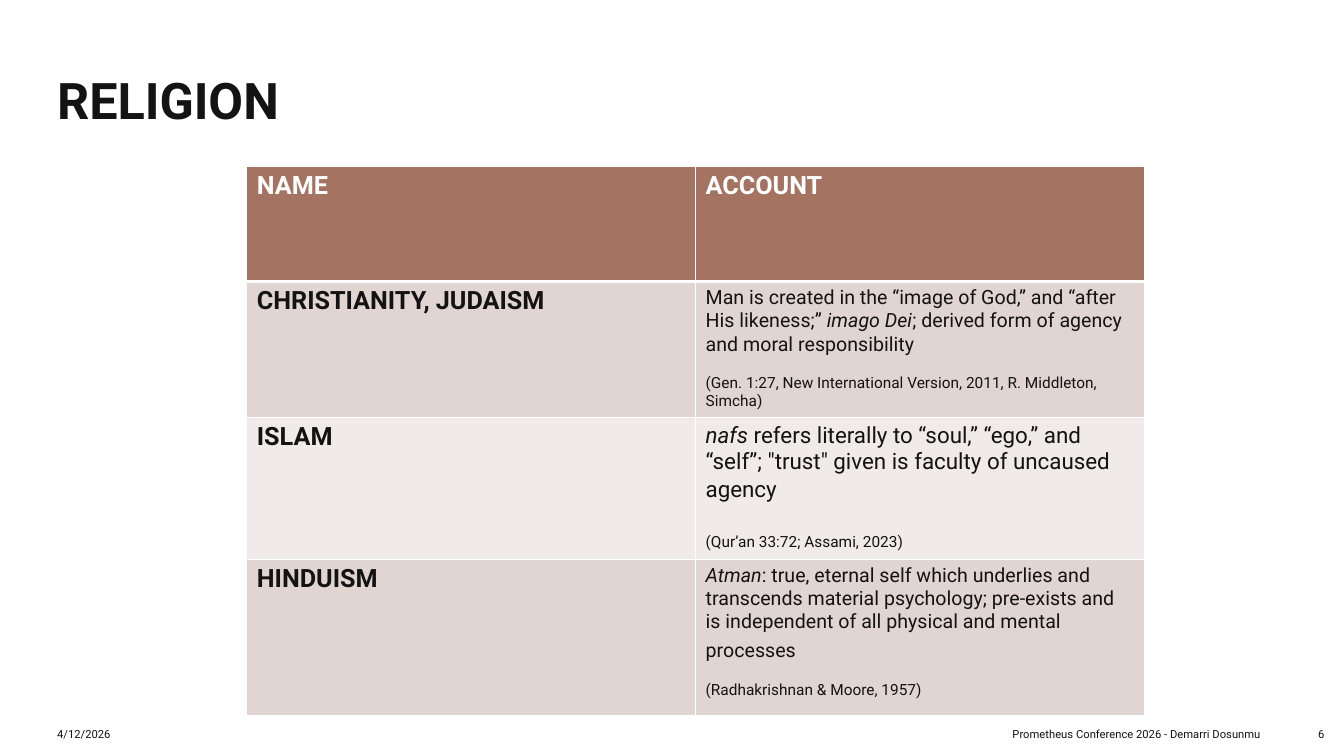
from lxml.etree import SubElement
from pptx import Presentation
from pptx.dml.color import RGBColor as Rgb
from pptx.enum.text import MSO_ANCHOR as Anchor, PP_ALIGN as Align
from pptx.oxml.ns import qn
from pptx.util import Cm, Pt

COLORS = {
    "ink": "131313",
    "white": "FFFFFF",
    "header": "A57361",
    "band_dark": "E1D5D2",
    "band_light": "F0EBEA",
}

# Each row: name, account as (text, size, italic) runs, citation, gap above it
RELIGIONS = [
    ("CHRISTIANITY, JUDAISM",
     [("Man is created in the “image of God,” and “after His likeness;” ", 14, False),
      ("imago Dei", 14, True),
      ("; derived form of agency and moral responsibility", 14, False)],
     "(Gen. 1:27, New International Version, 2011, R. Middleton, Simcha)", 13),
    ("ISLAM",
     [("nafs", 16, True),
      (" refers literally to “soul,” “ego,” and “self”; \"trust\" given is "
       "faculty of uncaused agency", 16, False),
      (" ", 18, False)],
     "(Qur’an 33:72; Assami, 2023)", 21),
    ("HINDUISM",
     [("Atman", 14, True),
      (": true, eternal self which underlies and transcends material psychology; "
       "pre-exists and is independent of all physical and mental processes", 14, False),
      (" ", 18, False)],
     "(Radhakrishnan & Moore, 1957)", 13),
]
ROW_HEIGHTS = [2.9, 3.37, 3.51, 3.94]
COLUMN_WIDTH = 11.31


def write(paragraph, text, size=18, color="ink", bold=False, italic=False):
    run = paragraph.add_run()
    run.text = text
    font = run.font
    font.name = "Roboto"
    font.size = Pt(size)
    font.bold = bold
    font.italic = italic
    font.color.rgb = Rgb.from_string(COLORS[color])


class SlideBuilder:
    def __init__(self, slide):
        self.slide = slide

    def text(self, left, top, width, height, words, align=Align.LEFT,
             anchor=Anchor.MIDDLE, spacing=1.0, **style):
        box = self.slide.shapes.add_textbox(Cm(left), Cm(top), Cm(width), Cm(height))
        frame = box.text_frame
        frame.word_wrap = True
        frame.vertical_anchor = anchor
        paragraph = frame.paragraphs[0]
        paragraph.alignment = align
        paragraph.line_spacing = spacing
        write(paragraph, words, **style)

    def table(self, left, top, column_widths, row_heights):
        table = self.slide.shapes.add_table(
            len(row_heights), len(column_widths), Cm(left), Cm(top),
            Cm(sum(column_widths)), Cm(sum(row_heights))).table
        for column, width in zip(table.columns, column_widths):
            column.width = Cm(width)
        for row, height in zip(table.rows, row_heights):
            row.height = Cm(height)
        return table

    def cell(self, cell, fill, top=1, bottom=1):
        properties = cell._tc.get_or_add_tcPr()
        for side, points in (("L", 1), ("R", 1), ("T", top), ("B", bottom)):
            line = SubElement(properties, qn(f"a:ln{side}"), w=str(Pt(points)))
            solid = SubElement(line, qn("a:solidFill"))
            SubElement(solid, qn("a:srgbClr"), val=COLORS["white"])
        cell.fill.solid()
        cell.fill.fore_color.rgb = Rgb.from_string(COLORS[fill])
        return cell.text_frame


def main():
    deck = Presentation()
    deck.slide_width, deck.slide_height = Cm(33.87), Cm(19.05)
    page = SlideBuilder(deck.slides.add_slide(deck.slide_layouts[6]))

    # Title
    page.text(1.19, 1.78, 11.2, 10.06, "RELIGION", anchor=Anchor.TOP,
              spacing=0.9, size=36, bold=True)

    # Footer
    for left, width, words, align in (
            (1.19, 7.9, "4/12/2026", Align.LEFT),
            (24.71, 7.39, "Prometheus Conference 2026 - Demarri Dosunmu ", Align.RIGHT),
            (32.36, 1.27, "6", Align.RIGHT)):
        page.text(left, 18.03, width, 0.94, words, align=align, size=8)

    # Table header
    accounts = page.table(6.22, 4.19, [COLUMN_WIDTH] * 2, ROW_HEIGHTS)
    for column, heading in enumerate(("NAME", "ACCOUNT")):
        header = page.cell(accounts.cell(0, column), "header", bottom=3)
        write(header.paragraphs[0], heading, color="white", bold=True)

    # One row per religion
    for row, (name, account, citation, gap) in enumerate(RELIGIONS, start=1):
        band = "band_dark" if row % 2 else "band_light"
        name_frame, account_frame = (
            page.cell(accounts.cell(row, column), band, top=3 if row == 1 else 1)
            for column in range(2))
        write(name_frame.paragraphs[0], name, bold=True)
        for words, size, italic in account:
            write(account_frame.paragraphs[0], words, size=size, italic=italic)
        source = account_frame.add_paragraph()
        source.space_before = Pt(gap)
        write(source, citation, size=11)

    deck.save("out.pptx")


if __name__ == "__main__":
    main()
